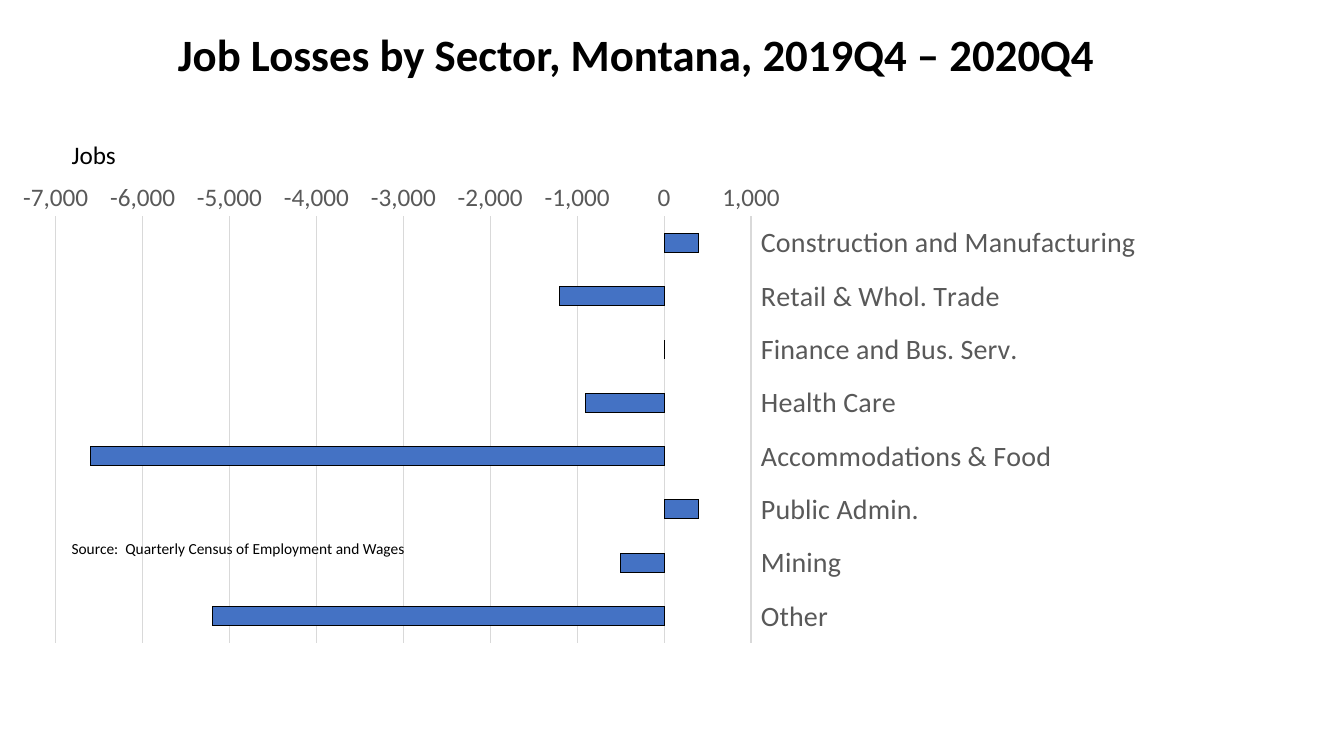
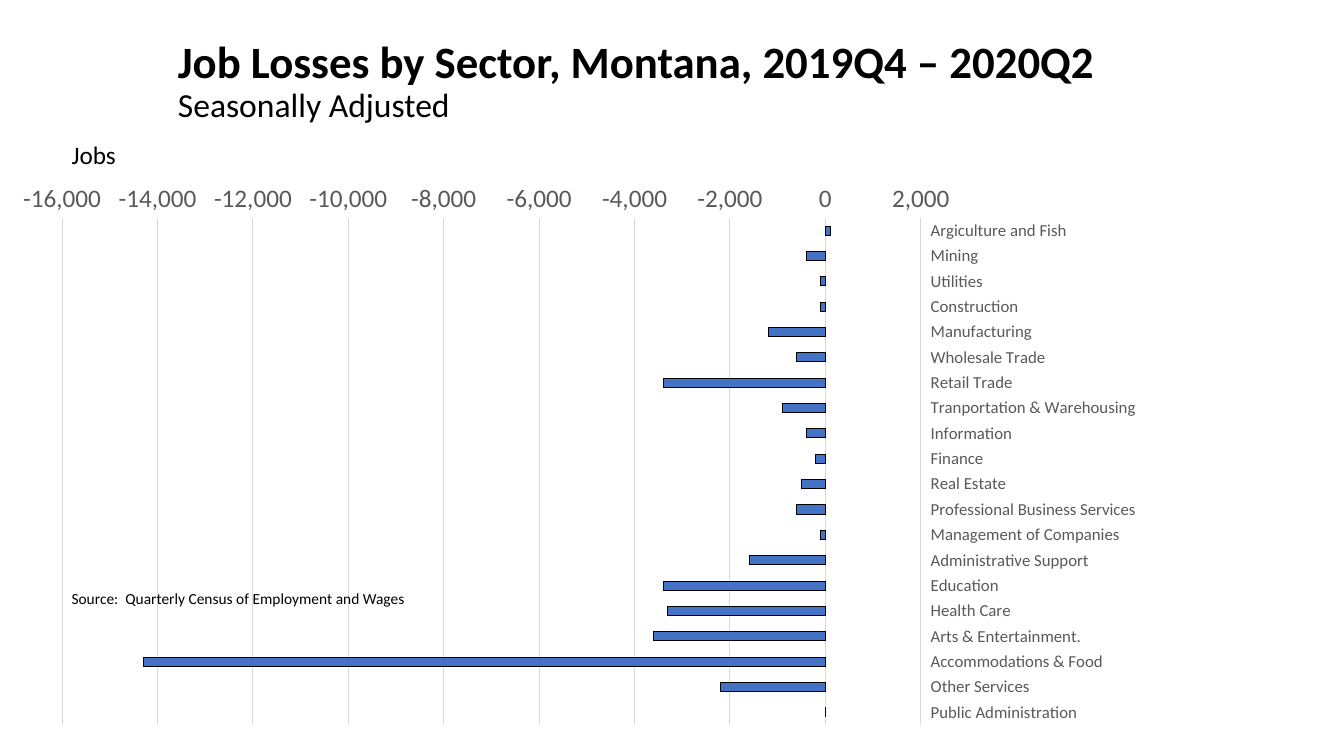
from dataclasses import dataclass

import pptx
import pptx.chart.data
import pptx.dml.color
import pptx.enum.chart
import pptx.enum.text
import pptx.util

Pt = pptx.util.Pt
Color = pptx.dml.color.RGBColor.from_string


@dataclass(frozen=True)
class Theme:
    font: str = "Calibri"
    text: str = "000000"
    axis_text: str = "595959"
    grid: str = "D9D9D9"
    bar: str = "4472C4"
    title_size: int = 32
    subtitle_size: int = 24
    label_size: int = 18
    source_size: int = 11


THEME = Theme()

# Boxes in points: left, top, width, height
TITLE_BOX = (120, 13.5, 840, 90)
UNIT_BOX = (44, 96, 373, 29)
SOURCE_TEXT = "Source:  Quarterly Census of Employment and Wages"

LATE_2020 = {
    "Construction and Manufacturing": 400,
    "Retail & Whol. Trade": -1200,
    "Finance and Bus. Serv.": 0,
    "Health Care": -900,
    "Accommodations & Food": -6600,
    "Public Admin.": 400,
    "Mining": -500,
    "Other": -5200,
}
MID_2020 = {
    "Argiculture and Fish": 100,
    "Mining": -400,
    "Utilities": -100,
    "Construction": -100,
    "Manufacturing": -1200,
    "Wholesale Trade": -600,
    "Retail Trade": -3400,
    "Tranportation & Warehousing": -900,
    "Information": -400,
    "Finance": -200,
    "Real Estate": -500,
    "Professional Business Services": -600,
    "Management of Companies": -100,
    "Administrative Support": -1600,
    "Education": -3400,
    "Health Care": -3300,
    "Arts & Entertainment.": -3600,
    "Accommodations & Food": -14300,
    "Other Services": -2200,
    "Public Administration": 0,
}


def style_font(font, size, color=THEME.text, bold=False):
    font.name = THEME.font
    font.size = Pt(size)
    font.bold = bold
    font.color.rgb = Color(color)


def style_line(line, color, width):
    line.color.rgb = Color(color)
    line.width = Pt(width)


def add_text(slide, box, lines):
    """Place one paragraph per (text, size, bold) line."""
    frame = slide.shapes.add_textbox(*map(Pt, box)).text_frame
    frame.word_wrap = True
    for index, (text, size, bold) in enumerate(lines):
        paragraph = frame.add_paragraph() if index else frame.paragraphs[0]
        paragraph.text = text
        style_font(paragraph.font, size, bold=bold)
    return frame


def add_title(slide, box, title, subtitle):
    lines = [(title, THEME.title_size, True)]
    if subtitle:
        lines.append((subtitle, THEME.subtitle_size, False))
    frame = add_text(slide, box, lines)
    frame.vertical_anchor = pptx.enum.text.MSO_ANCHOR.MIDDLE
    for paragraph in frame.paragraphs:
        paragraph.line_spacing = 0.9
    # A lone title leaves room for a second line below it
    if not subtitle:
        frame.margin_bottom = Pt(39)


def add_bar_chart(slide, box, jobs, scale, category_size):
    data = pptx.chart.data.CategoryChartData(number_format="#,##0")
    data.categories = list(jobs)
    data.add_series("Series 1", list(jobs.values()))
    chart = slide.shapes.add_chart(
        pptx.enum.chart.XL_CHART_TYPE.BAR_CLUSTERED, *map(Pt, box), data).chart
    chart.has_legend = False
    chart.has_title = False
    style_font(chart.font, 10)

    # Bars
    plot = chart.plots[0]
    plot.gap_width = 182
    plot.vary_by_categories = False
    series = plot.series[0]
    series.invert_if_negative = False
    series.format.fill.solid()
    series.format.fill.fore_color.rgb = Color(THEME.bar)
    style_line(series.format.line, THEME.text, 0)

    # Axes: sectors run downward, with their names on the right
    sectors, values = chart.category_axis, chart.value_axis
    for axis, size in ((sectors, category_size), (values, THEME.label_size)):
        axis.major_tick_mark = pptx.enum.chart.XL_TICK_MARK.NONE
        axis.minor_tick_mark = pptx.enum.chart.XL_TICK_MARK.NONE
        style_font(axis.tick_labels.font, size, THEME.axis_text)
    sectors.reverse_order = True
    sectors.has_major_gridlines = False
    sectors.tick_label_position = pptx.enum.chart.XL_TICK_LABEL_POSITION.HIGH
    style_line(sectors.format.line, THEME.grid, 0.75)
    values.minimum_scale, values.maximum_scale, values.major_unit = scale
    values.tick_labels.number_format = "#,##0"
    values.tick_labels.number_format_is_linked = False
    values.format.line.fill.background()
    values.has_major_gridlines = True
    style_line(values.major_gridlines.format.line, THEME.grid, 0.75)


def add_jobs_slide(presentation, title, subtitle, jobs, scale,
                   category_size, chart_height, source_top):
    slide = presentation.slides.add_slide(presentation.slide_layouts[6])
    add_bar_chart(slide, (0, 123, 828, chart_height), jobs, scale, category_size)
    add_title(slide, TITLE_BOX, title, subtitle)
    add_text(slide, (44, source_top, 373, 21),
             [(SOURCE_TEXT, THEME.source_size, False)])
    add_text(slide, UNIT_BOX, [("Jobs", THEME.label_size, False)])


def main():
    presentation = pptx.Presentation()
    presentation.slide_width = Pt(960)
    presentation.slide_height = Pt(540)
    add_jobs_slide(
        presentation, "Job Losses by Sector, Montana, 2019Q4 – 2020Q4", None,
        LATE_2020, (-7000, 1000, 1000),
        category_size=20, chart_height=343, source_top=381.5)
    add_jobs_slide(
        presentation, "Job Losses by Sector, Montana, 2019Q4 – 2020Q2",
        "Seasonally Adjusted", MID_2020, (-16000, 2000, 2000),
        category_size=12, chart_height=403, source_top=417)
    presentation.save("out.pptx")


if __name__ == "__main__":
    main()
